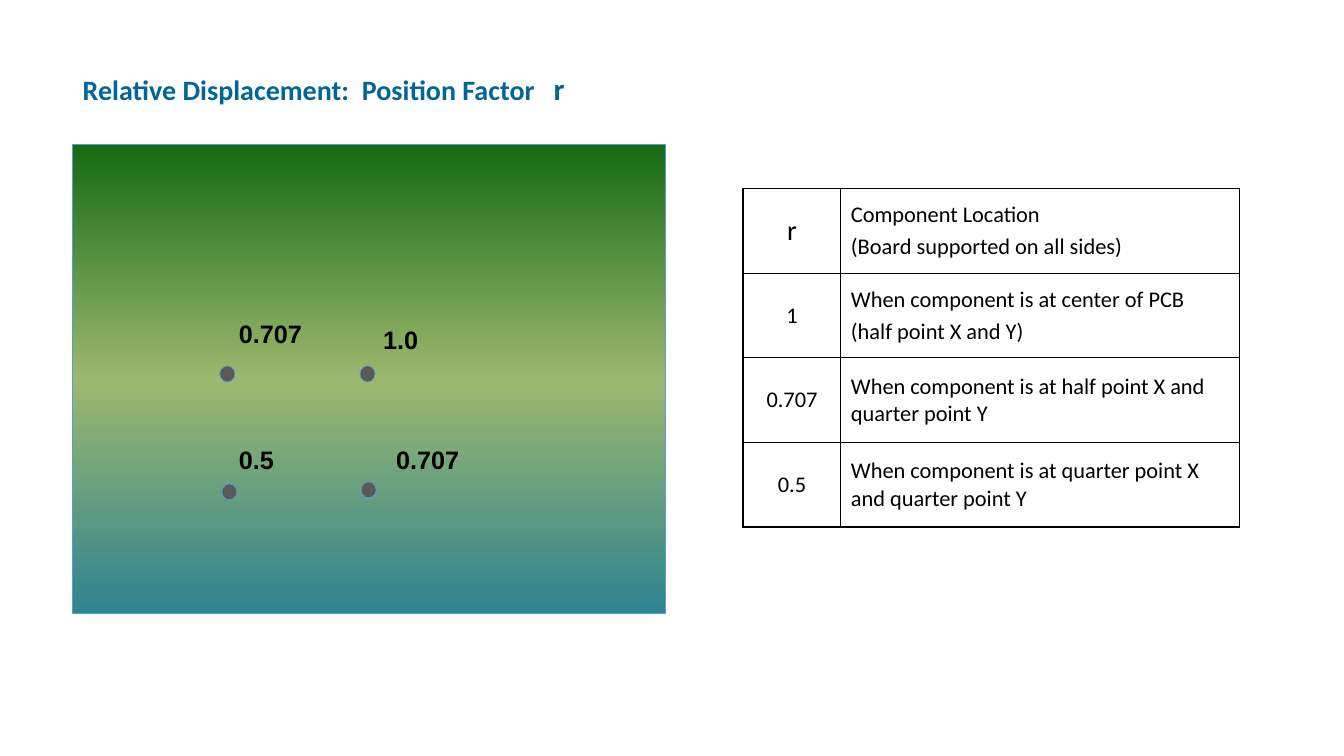
"""Build a slide on the position factor r for relative displacement of a circuit board."""
from copy import deepcopy
from dataclasses import dataclass
from typing import NamedTuple

from lxml import etree
from pptx import Presentation
from pptx.dml.color import RGBColor
from pptx.enum.shapes import MSO_SHAPE
from pptx.enum.text import MSO_ANCHOR, MSO_AUTO_SIZE, PP_ALIGN
from pptx.oxml.ns import qn
from pptx.shapes.autoshape import Shape
from pptx.slide import Slide
from pptx.table import _Cell
from pptx.text.text import _Paragraph
from pptx.util import Inches, Pt

RECTANGLE, OVAL = MSO_SHAPE.RECTANGLE, MSO_SHAPE.OVAL
MIDDLE, TOP = MSO_ANCHOR.MIDDLE, MSO_ANCHOR.TOP
LEFT, CENTER = PP_ALIGN.LEFT, PP_ALIGN.CENTER
NO_AUTO_SIZE = MSO_AUTO_SIZE.NONE
SLIDE_WIDTH, SLIDE_HEIGHT = Inches(13.33), Inches(7.5)


@dataclass(frozen=True)
class Theme:
    """Colours, fonts and type sizes of the slide."""
    title: str = "006699"
    text: str = "000000"
    outline: str = "5B9BD5"
    dot: str = "595959"
    board: tuple[str, ...] = ("2E8491", "9CB86E", "156B13")
    body_font: str = "Calibri"
    label_font: str = "Arial"
    title_size: int = 20
    symbol_size: int = 22
    heading_size: int = 20
    label_size: int = 18
    table_size: int = 16


class Box(NamedTuple):
    """A frame in percent of the slide's width and height."""
    left: float
    top: float
    width: float
    height: float

    def lengths(self) -> tuple[int, int, int, int]:
        """Return the frame as slide lengths."""
        return (across(self.left), down(self.top), across(self.width), down(self.height))


class Mark(NamedTuple):
    """A component position with its factor; corners in percent of the slide."""
    factor: str
    dot: tuple[float, float]
    label: tuple[float, float]


class FactorRow(NamedTuple):
    """One row of the factor table."""
    factor: str
    location: tuple[str, ...]
    factor_size: int


THEME = Theme()
TITLE_BOX = Box(5.4, 8.53, 38.03, 6.27)
BOARD_BOX = Box(5.4, 19.07, 44.11, 62.13)
TABLE_BOX = Box(55.29, 24.93, 36.91, 44.8)
DOT_SIZE = (1.13, 2.13)
LABEL_SIZE = (6.3, 5.33)
COLUMN_WIDTHS = (7.28, 29.63)
MARKS = (
    Mark("1.0", (26.78, 48.4), (27.76, 42.27)),
    Mark("0.707", (16.35, 48.4), (17.03, 41.47)),
    Mark("0.5", (16.5, 64), (17.03, 58.13)),
    Mark("0.707", (26.86, 63.73), (28.73, 58.13)),
)
ROWS = (
    FactorRow("r", ("Component Location", "(Board supported on all sides)"), THEME.heading_size),
    FactorRow("1", ("When component is at center of PCB", "(half point X and Y)"), THEME.table_size),
    FactorRow("0.707", ("When component is at half point X and quarter point Y",), THEME.table_size),
    FactorRow("0.5", ("When component is at quarter point X and quarter point Y",), THEME.table_size),
)


def across(percent: float) -> int:
    """Return a share of the slide's width."""
    return round(SLIDE_WIDTH * percent / 100)


def down(percent: float) -> int:
    """Return a share of the slide's height."""
    return round(SLIDE_HEIGHT * percent / 100)


def add_run(paragraph: _Paragraph, text: str, font: str, size: int, color: str,
            bold: bool = False, spacing: float = 0) -> None:
    """Add a formatted run, with letter spacing in points."""
    run = paragraph.add_run()
    run.text = text
    run.font.name = font
    run.font.size = Pt(size)
    run.font.bold = bold
    run.font.color.rgb = RGBColor.from_string(color)
    if spacing:
        run.font._element.set("spc", str(round(spacing * 100)))


def add_outlined(slide: Slide, kind: MSO_SHAPE, box: Box) -> Shape:
    """Add a shape with the thin outline of the drawing."""
    shape = slide.shapes.add_shape(kind, *box.lengths())
    shape.shadow.inherit = False
    shape.line.color.rgb = RGBColor.from_string(THEME.outline)
    shape.line.width = Pt(0.5)
    return shape


def add_title(slide: Slide) -> None:
    """Fill the title placeholder."""
    title = slide.shapes.title
    title.left, title.top, title.width, title.height = TITLE_BOX.lengths()
    frame = title.text_frame
    frame.auto_size = NO_AUTO_SIZE
    frame.vertical_anchor = TOP
    paragraph = frame.paragraphs[0]
    paragraph.alignment = LEFT
    pieces = (
        ("Relative Displacement:", THEME.title_size, 0),
        (" ", THEME.title_size, 4.5),
        ("Position Factor", THEME.title_size, 0),
        (" ", THEME.title_size, 9),
        ("r", THEME.symbol_size, 0),
    )
    for text, size, spacing in pieces:
        add_run(paragraph, text, THEME.body_font, size, THEME.title, True, spacing)


def add_board(slide: Slide) -> None:
    """Draw the board with its gradient from bottom to top."""
    board = add_outlined(slide, RECTANGLE, BOARD_BOX)
    board.fill.gradient()
    board.fill.gradient_angle = 90
    stop_list = board._element.spPr.find(".//" + qn("a:gsLst"))
    stop_list.insert(1, deepcopy(stop_list[0]))
    for index, (stop, color) in enumerate(zip(board.fill.gradient_stops, THEME.board)):
        stop.position = index / 2
        stop.color.rgb = RGBColor.from_string(color)


def add_mark(slide: Slide, mark: Mark) -> None:
    """Draw a component dot and its factor."""
    dot = add_outlined(slide, OVAL, Box(*mark.dot, *DOT_SIZE))
    dot.fill.solid()
    dot.fill.fore_color.rgb = RGBColor.from_string(THEME.dot)
    label = slide.shapes.add_textbox(*Box(*mark.label, *LABEL_SIZE).lengths())
    label.text_frame.word_wrap = True
    add_run(label.text_frame.paragraphs[0], mark.factor, THEME.label_font,
            THEME.label_size, THEME.text, True)


def fill_cell(cell: _Cell, lines: tuple[str, ...], size: int, alignment: PP_ALIGN) -> None:
    """Write lines into a clear cell with four borders."""
    cell.fill.background()
    cell.vertical_anchor = MIDDLE
    for index, side in enumerate(("a:lnL", "a:lnR", "a:lnT", "a:lnB")):
        border = etree.Element(qn(side), w=str(Pt(1)))
        solid = etree.SubElement(border, qn("a:solidFill"))
        etree.SubElement(solid, qn("a:srgbClr"), val=THEME.text)
        cell._tc.get_or_add_tcPr().insert(index, border)
    for index, line in enumerate(lines):
        frame = cell.text_frame
        paragraph = frame.add_paragraph() if index else frame.paragraphs[0]
        paragraph.alignment = alignment
        paragraph.space_before = Pt(size * 0.2)
        add_run(paragraph, line, THEME.body_font, size, THEME.text)


def add_factor_table(slide: Slide) -> None:
    """Draw the table of factors and component locations."""
    table = slide.shapes.add_table(len(ROWS), len(COLUMN_WIDTHS), *TABLE_BOX.lengths()).table
    table.first_row = table.horz_banding = False
    for column, width in zip(table.columns, COLUMN_WIDTHS):
        column.width = across(width)
    for index, row in enumerate(ROWS):
        fill_cell(table.cell(index, 0), (row.factor,), row.factor_size, CENTER)
        fill_cell(table.cell(index, 1), row.location, THEME.table_size, LEFT)


def main() -> None:
    """Build and save the slide."""
    presentation = Presentation()
    presentation.slide_width, presentation.slide_height = SLIDE_WIDTH, SLIDE_HEIGHT
    slide = presentation.slides.add_slide(presentation.slide_layouts[5])
    add_title(slide)
    add_board(slide)
    for mark in MARKS:
        add_mark(slide, mark)
    add_factor_table(slide)
    presentation.save("out.pptx")


if __name__ == "__main__":
    main()
